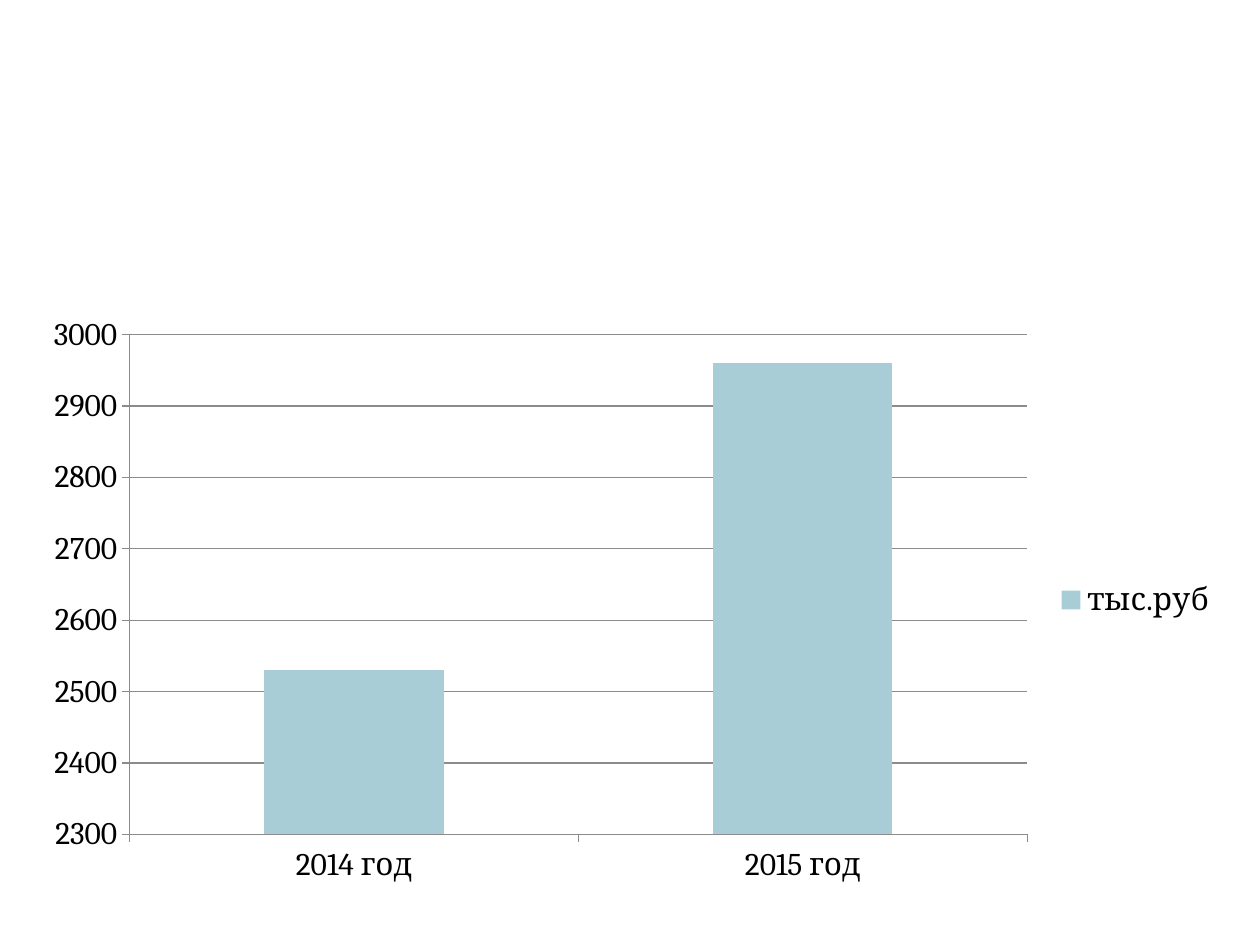
from pptx import Presentation
from pptx import util as u
from pptx.chart import data as chart_data
from pptx.dml import color
from pptx.enum import chart as chart_enum

COLORS = {"bar": "A8CDD7", "line": "8B8B8B", "text": "000000"}
AMOUNTS = {"2014 год": 2530, "2015 год": 2960}


def rgb(name: str) -> color.RGBColor:
    return color.RGBColor.from_string(COLORS[name])


def style_line(line) -> None:
    line.color.rgb = rgb("line")
    line.width = u.Pt(0.75)


def style_axis(axis) -> None:
    axis.major_tick_mark = chart_enum.XL_TICK_MARK.OUTSIDE
    axis.minor_tick_mark = chart_enum.XL_TICK_MARK.NONE
    style_line(axis.format.line)


def add_amount_chart(slide) -> None:
    amounts = chart_data.CategoryChartData()
    amounts.categories = list(AMOUNTS)
    amounts.add_series("тыс.руб", list(AMOUNTS.values()))
    chart = slide.shapes.add_chart(
        chart_enum.XL_CHART_TYPE.COLUMN_STACKED,
        u.Cm(0.6), u.Cm(6.14), u.Cm(24.2), u.Cm(11.91), amounts,
    ).chart

    chart.has_title = False
    chart.font.name = "Cambria"
    chart.font.size = u.Pt(18)
    chart.font.color.rgb = rgb("text")
    chart.has_legend = True
    chart.legend.position = chart_enum.XL_LEGEND_POSITION.RIGHT
    chart.legend.include_in_layout = False

    plot = chart.plots[0]
    plot.vary_by_categories = False
    plot.gap_width = 150
    plot.overlap = 100
    bar_fill = plot.series[0].format.fill
    bar_fill.solid()
    bar_fill.fore_color.rgb = rgb("bar")

    for axis in (chart.category_axis, chart.value_axis):
        style_axis(axis)
    value_axis = chart.value_axis
    value_axis.minimum_scale = 2300
    value_axis.maximum_scale = 3000
    value_axis.major_unit = 100
    value_axis.has_major_gridlines = True
    style_line(value_axis.major_gridlines.format.line)


def main() -> None:
    presentation = Presentation()
    presentation.slide_width = u.Cm(25.4)
    presentation.slide_height = u.Cm(19.05)
    slide = presentation.slides.add_slide(presentation.slide_layouts[6])
    add_amount_chart(slide)
    presentation.save("out.pptx")


if __name__ == "__main__":
    main()
